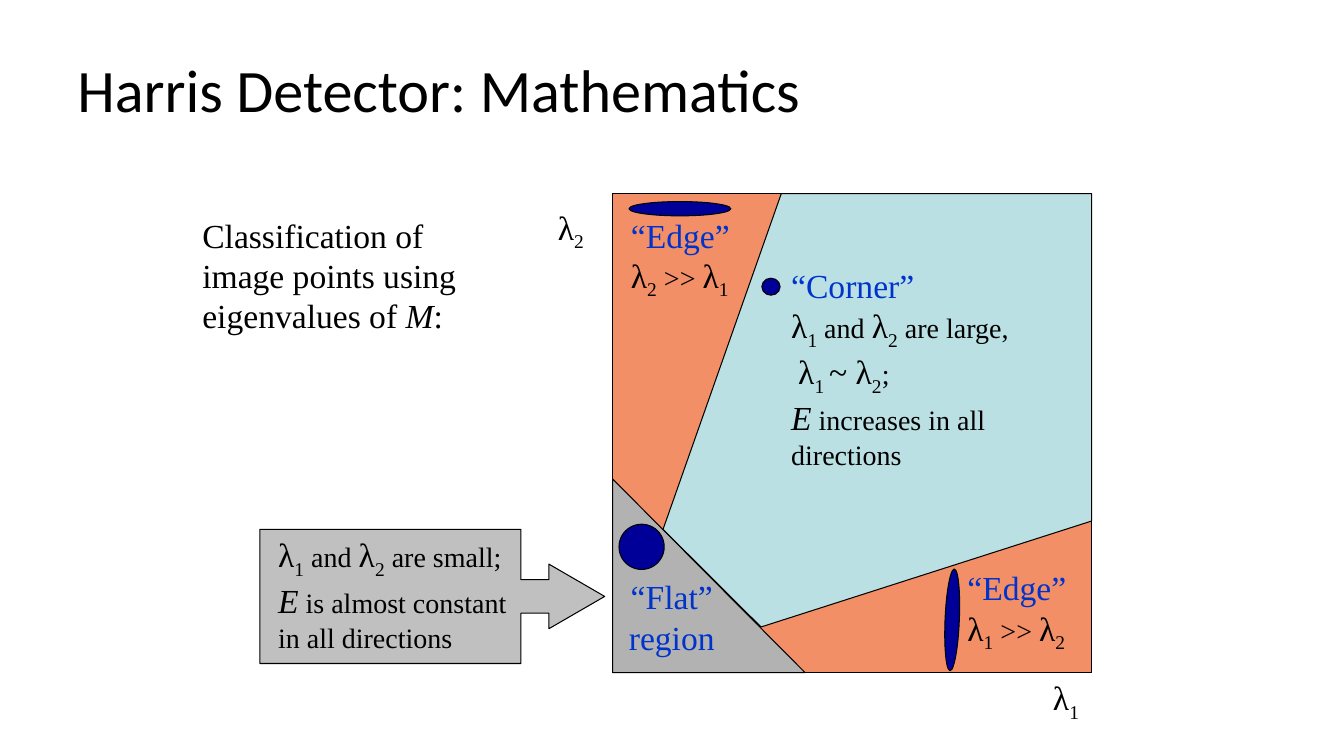
import pptx
import pptx.util
import pptx.dml.color
import pptx.enum.shapes
import pptx.enum.text
from dataclasses import dataclass

Cm = pptx.util.Cm
Align = pptx.enum.text.PP_ALIGN
Anchor = pptx.enum.text.MSO_ANCHOR
Preset = pptx.enum.shapes.MSO_SHAPE


@dataclass(frozen=True)
class Theme:
    title_font: str = "Calibri"
    body_font: str = "Times New Roman"
    title_size: float = 43
    label_size: float = 24
    detail_size: float = 20
    line_width: float = 0.75
    ink: str = "000000"
    accent: str = "0033CC"
    edge: str = "F38F67"
    corner: str = "BBE0E3"
    flat: str = "B2B2B2"
    callout: str = "C0C0C0"
    sample: str = "000099"


THEME = Theme()

# Format of each kind of text run
STYLES = {
    "title": dict(font=THEME.title_font, size=THEME.title_size),
    "label": dict(),
    "name": dict(color=THEME.accent),
    "detail": dict(size=THEME.detail_size),
    "variable": dict(italic=True),
    "sub": dict(subscript=True),
}

LAMBDA_1 = [("λ", "label"), ("1", "sub")]
LAMBDA_2 = [("λ", "label"), ("2", "sub")]
BOTH_LAMBDAS = LAMBDA_1 + [(" and ", "detail")] + LAMBDA_2
MUCH_LARGER = [(" >> ", "detail")]

# Lengths in cm; boxes are left, top, width, height
SLIDE = (33.87, 19.05)
PLANE = (15.44, 4.88, 12.07, 12.07)
FLAT_REGION = (15.44, 12.07, 4.85, 4.88)
CORNER_REGION = [(16.71, 13.34), (19.69, 4.88), (27.51, 4.88), (27.51, 13.13), (19.18, 15.8)]
CALLOUT = (6.55, 13.34, 8.69, 3.38)
CALLOUT_PROPORTIONS = (0.25, 0.241, 0.416, 0.757)

# Box, rotation
SAMPLE_ELLIPSES = [
    ((19.2, 7.01, 0.46, 0.43), 0),
    ((15.85, 5.08, 2.57, 0.36), 0),
    ((15.6, 13.21, 1.14, 1.14), 0),
    ((22.71, 15.44, 2.57, 0.36), 92.4),
]

# Box, lines of runs, placement
TEXTS = [
    ((1.7, 0.64, 31.55, 3.18), [[("Harris Detector: Mathematics", "title")]],
     dict(anchor=Anchor.MIDDLE)),
    ((25.81, 16.94, 2.11, 1.27), [LAMBDA_1], dict(align=Align.CENTER)),
    ((12.9, 5.08, 2.97, 1.27), [LAMBDA_2], dict(align=Align.CENTER)),
    ((19.69, 6.55, 7.42, 5.21), [
        [("“Corner”", "name")],
        BOTH_LAMBDAS + [(" are large,", "detail")],
        [(" ", "detail"), ("λ", "label"), ("1 ", "sub"), ("~ ", "label")]
        + LAMBDA_2 + [(";", "detail")],
        [("E", "variable"), (" increases in all directions", "detail")],
    ], {}),
    ((6.76, 13.34, 6.55, 3.18), [
        BOTH_LAMBDAS + [(" are small;", "detail")],
        [("E", "variable"), (" is almost constant in all directions", "detail")],
    ], {}),
    ((24.13, 14.17, 3.61, 2.31),
     [[("“Edge”", "name")], LAMBDA_1 + MUCH_LARGER + LAMBDA_2], {}),
    ((15.65, 5.28, 3.61, 2.31),
     [[("“Edge”", "name")], LAMBDA_2 + MUCH_LARGER + LAMBDA_1], {}),
    ((15.24, 14.4, 3.38, 2.31), [[("“Flat” region", "name")]], dict(align=Align.CENTER)),
    ((4.85, 5.28, 7.42, 3.33), [[
        ("Classification of image points using eigenvalues of ", "label"),
        ("M", "variable"), (":", "label"),
    ]], {}),
]


def rgb(color):
    return pptx.dml.color.RGBColor.from_string(color)


def add_run(paragraph, text, font=THEME.body_font, size=THEME.label_size,
            color=THEME.ink, italic=False, subscript=False):
    run = paragraph.add_run()
    run.text = text
    run.font.name = font
    run.font.size = pptx.util.Pt(size)
    run.font.color.rgb = rgb(color)
    run.font.italic = italic
    if subscript:
        run._r.get_or_add_rPr().set("baseline", "-25000")


def add_text(slide, box, lines, align=Align.LEFT, anchor=Anchor.TOP):
    frame = slide.shapes.add_textbox(*map(Cm, box)).text_frame
    frame.word_wrap = True
    frame.vertical_anchor = anchor
    paragraph = frame.paragraphs[0]
    paragraph.alignment = align
    for number, line in enumerate(lines):
        if number:
            paragraph.add_line_break()
        for text, style in line:
            add_run(paragraph, text, **STYLES[style])


def paint(shape, color):
    shape.shadow.inherit = False
    shape.fill.solid()
    shape.fill.fore_color.rgb = rgb(color)
    shape.line.color.rgb = rgb(THEME.ink)
    shape.line.width = pptx.util.Pt(THEME.line_width)


def add_preset(slide, preset, box, color, rotation=0):
    shape = slide.shapes.add_shape(preset, *map(Cm, box))
    shape.rotation = rotation
    paint(shape, color)
    return shape


def add_polygon(slide, corners, color):
    start, *others = [(Cm(x), Cm(y)) for x, y in corners]
    outline = slide.shapes.build_freeform(*start)
    outline.add_line_segments(others, close=True)
    paint(outline.convert_to_shape(), color)


def main():
    deck = pptx.Presentation()
    deck.slide_width, deck.slide_height = map(Cm, SLIDE)
    slide = deck.slides.add_slide(deck.slide_layouts[6])

    callout = add_preset(slide, Preset.RIGHT_ARROW_CALLOUT, CALLOUT, THEME.callout)
    for index, proportion in enumerate(CALLOUT_PROPORTIONS):
        callout.adjustments[index] = proportion

    add_preset(slide, Preset.RECTANGLE, PLANE, THEME.edge)
    add_polygon(slide, CORNER_REGION, THEME.corner)
    add_preset(slide, Preset.RIGHT_TRIANGLE, FLAT_REGION, THEME.flat)
    for box, lines, placement in TEXTS:
        add_text(slide, box, lines, **placement)
    for box, rotation in SAMPLE_ELLIPSES:
        add_preset(slide, Preset.OVAL, box, THEME.sample, rotation)

    deck.save("out.pptx")


if __name__ == "__main__":
    main()
